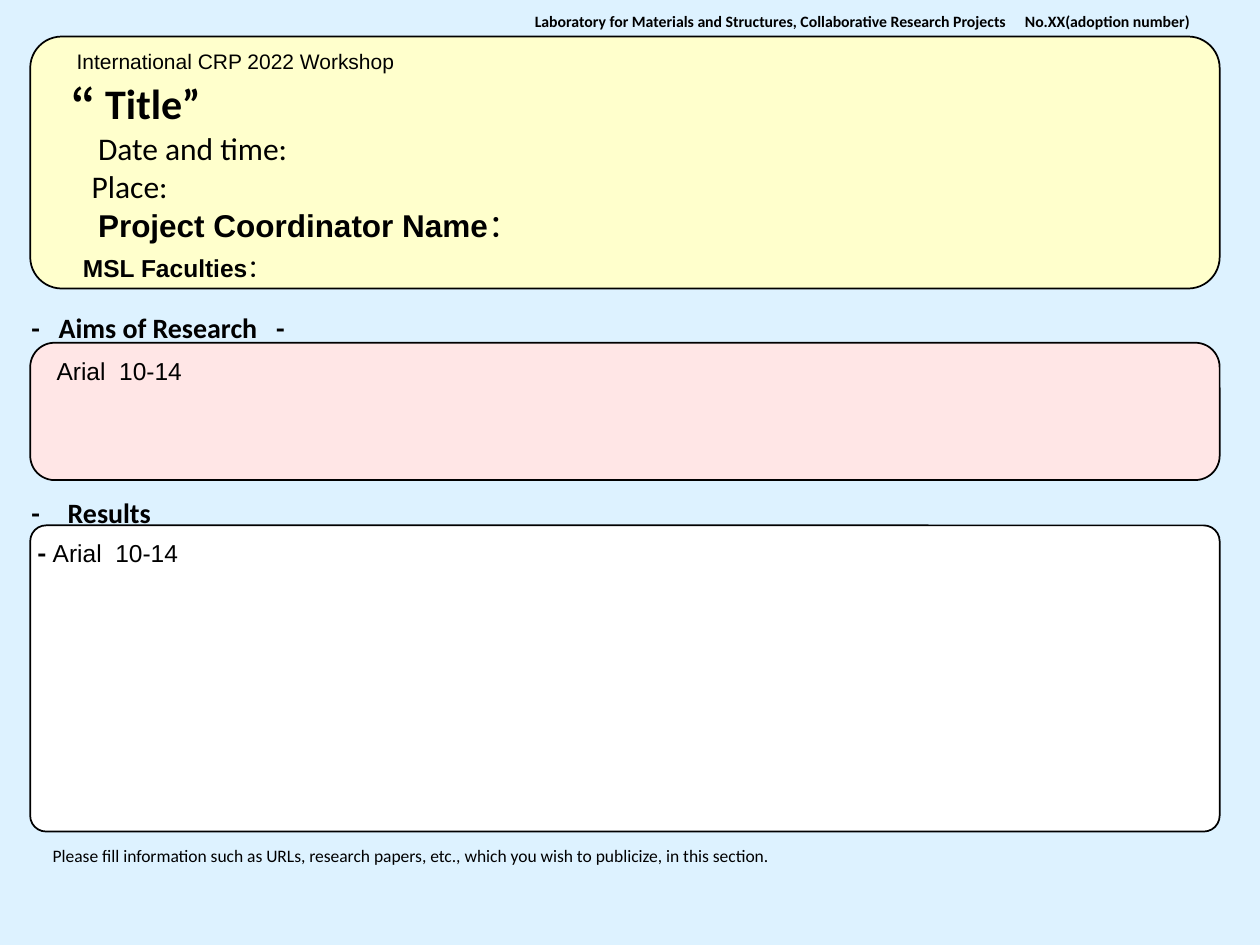
from pptx import Presentation
from pptx.dml.color import RGBColor
from pptx.enum.shapes import MSO_SHAPE
from pptx.enum.text import MSO_ANCHOR, PP_ALIGN
from pptx.util import Inches, Pt


def color(code):
    return RGBColor.from_string(code)


def style(font, name, size, bold):
    font.name = name
    font.size = Pt(size)
    font.bold = bold
    font.color.rgb = color("000000")


deck = Presentation()
deck.slide_width = Inches(10)
deck.slide_height = Inches(7.5)
slide = deck.slides.add_slide(deck.slide_layouts[6])
back = slide.background.fill
back.solid()
back.fore_color.rgb = color("DDF2FF")

panels = [
    (4.17, 2.43, 0.052, "FFFFFF"),
    (2.72, 1.09, 0.177, "FFE6E6"),
    (0.29, 2, 0.125, "FFFFCC"),
]
for top, high, curve, fill in panels:
    panel = slide.shapes.add_shape(
        MSO_SHAPE.ROUNDED_RECTANGLE, Inches(0.24), Inches(top), Inches(9.44), Inches(high))
    panel.adjustments[0] = curve
    panel.shadow.inherit = False
    panel.fill.solid()
    panel.fill.fore_color.rgb = color(fill)
    panel.line.color.rgb = color("000000")
    panel.line.width = Pt(1)

head = slide.shapes.add_textbox(Inches(0.28), Inches(0.35), Inches(9.44), Inches(1.12))
frame = head.text_frame
frame.word_wrap = True
frame.vertical_anchor = MSO_ANCHOR.TOP
frame.margin_top = Inches(0.36)
cjk = "Noto Sans CJK KR"
lines = [
    (0.19, [("“", cjk, 24, True), (" Title”", "Calibri", 24, True)]),
    (0.4, [("Date and time:", "Calibri", 18, False)]),
    (0.35, [("Place:", "Calibri", 18, False)]),
    (0.4, [("Project Coordinator Name", "Arial", 18, True), ("：", cjk, 18, False)]),
    (0.28, [("MSL Faculties", "Arial", 14, True), ("：", cjk, 14, False)]),
]
for row, (left, runs) in enumerate(lines):
    para = frame.add_paragraph() if row else frame.paragraphs[0]
    para.line_spacing = Pt(22)
    para._p.get_or_add_pPr().set("marL", str(Inches(left)))
    for text, name, size, bold in runs:
        run = para.add_run()
        run.text = text
        style(run.font, name, size, bold)

notes = [
    (3.98, 0.04, 5.56, 0.25, "Laboratory for Materials and Structures, Collaborative Research Projects"
     "\u3000 No.XX(adoption number)".replace("\u3000", "　"), "Calibri", 9, True, PP_ALIGN.RIGHT, 1),
    (0.15, 2.36, 2.24, 0.4, "-   Aims of Research   -", "Calibri", 16, True, PP_ALIGN.LEFT, 1.2),
    (0.32, 6.66, 9.72, 0.44, "Please fill information such as URLs, research papers, etc., "
     "which you wish to publicize, in this section.", "Calibri", 10, False, PP_ALIGN.LEFT, 1),
    (0.35, 2.78, 9.29, 0.34, "Arial  10-14", "Arial", 14, False, PP_ALIGN.LEFT, 1),
    (0.15, 3.83, 1.26, 0.4, "-　Results\v -", "Calibri", 16, True, PP_ALIGN.LEFT, 1.2),
    (0.32, 4.22, 3.34, 0.34, "Arial  10-14", "Arial", 14, False, PP_ALIGN.LEFT, 1),
    (0.51, 0.34, 4.45, 0.3, "International CRP 2022 Workshop", "Arial", 12, False, PP_ALIGN.LEFT, 1),
]
for left, top, wide, high, text, name, size, bold, align, space in notes:
    box = slide.shapes.add_textbox(Inches(left), Inches(top), Inches(wide), Inches(high))
    box.text_frame.word_wrap = space == 1
    para = box.text_frame.paragraphs[0]
    para.text = text
    para.alignment = align
    para.line_spacing = space
    style(para.font, name, size, bold)

deck.save("out.pptx")
